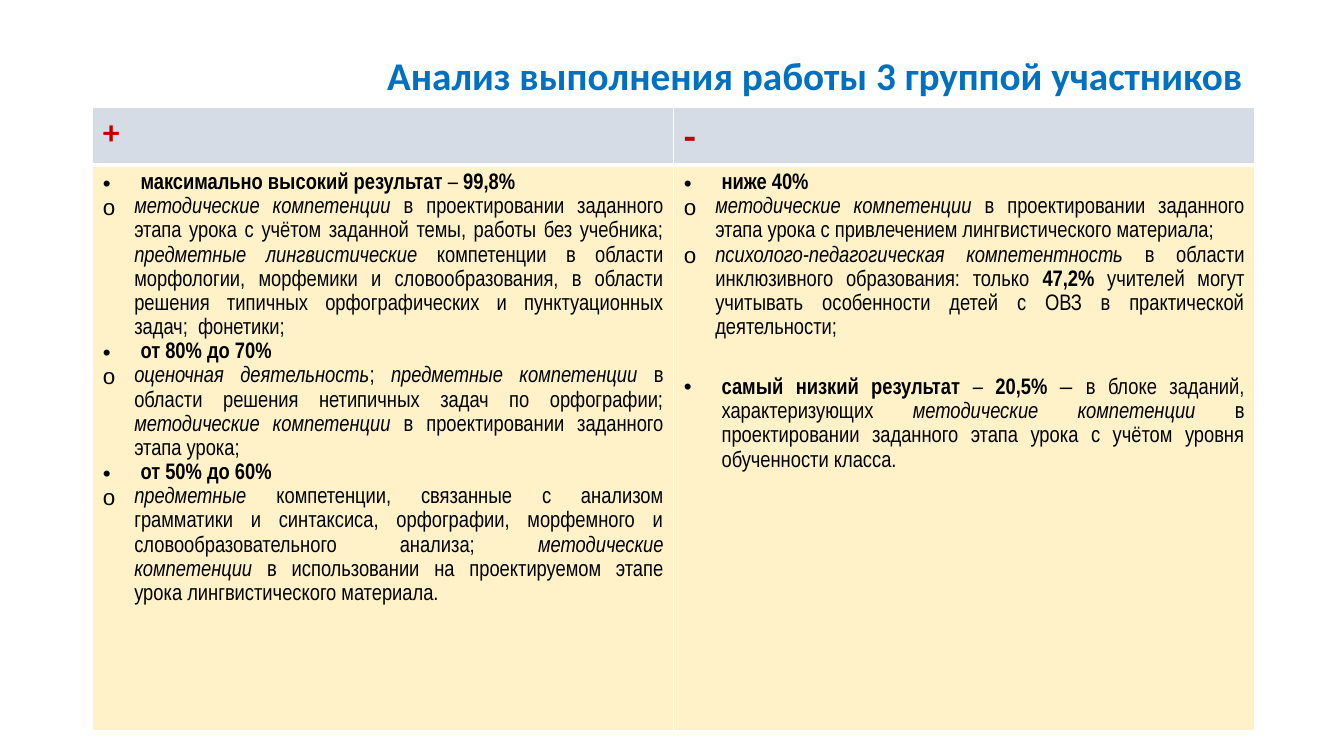
from dataclasses import dataclass

from lxml.etree import SubElement
from pptx import Presentation
from pptx.dml.color import RGBColor
from pptx.enum.text import MSO_ANCHOR, PP_ALIGN
from pptx.oxml.ns import qn
from pptx.util import Pt

BLUE, RED, BLACK, WHITE = "0070C0", "C00000", "000000", "FFFFFF"
HEADER_FILL, BODY_FILL = "D6DCE5", "FFF2C9"
HEADING_FONT, BODY_FONT, SYMBOL_FONT = "Calibri", "Arial Narrow", "Arial"


@dataclass(frozen=True)
class Span:
    text: str
    bold: bool = False
    italic: bool = False
    font: str = BODY_FONT
    size: float = 16
    color: str = BLACK


@dataclass(frozen=True)
class Item:
    spans: tuple[Span, ...]
    bullet: str
    indent: float
    before: float = 0


@dataclass(frozen=True)
class Column:
    heading: Span
    items: tuple[Item, ...]


def rgb(color: str) -> RGBColor:
    return RGBColor.from_string(color)


def strong(text: str) -> Span:
    return Span(text, bold=True)


def slanted(text: str) -> Span:
    return Span(text, italic=True)


def level(*spans: Span, before: float = 0) -> Item:
    return Item(spans, "•", 27, before)


def detail(*spans: Span) -> Item:
    return Item(spans, "o", 22.5)


def heading(text: str, size: float, color: str = RED) -> Span:
    return Span(text, bold=True, font=HEADING_FONT, size=size, color=color)


TITLE = heading("Анализ выполнения работы 3 группой участников", 28, BLUE)

COLUMNS = (
    Column(heading("+", 24), (
        level(strong("максимально высокий результат"), Span(" – "), strong("99,8%")),
        detail(
            slanted("методические компетенции"),
            Span(" в проектировании заданного этапа урока с учётом заданной темы, "
                 "работы без учебника; "),
            slanted("предметные лингвистические"),
            Span(" компетенции в области морфологии, морфемики и словообразования, "
                 "в области решения типичных орфографических и пунктуационных задач;  фонетики;"),
        ),
        level(strong("от 80% до 70%")),
        detail(
            slanted("оценочная деятельность"),
            Span("; "),
            slanted("предметные компетенции"),
            Span(" в области решения нетипичных задач по орфографии; "),
            slanted("методические компетенции"),
            Span(" в проектировании заданного этапа урока;"),
        ),
        level(strong("от 50% до 60%")),
        detail(
            slanted("предметные "),
            Span("компетенции, связанные с анализом грамматики и синтаксиса, орфографии, "
                 "морфемного и словообразовательного анализа; "),
            slanted("методические компетенции "),
            Span("в использовании на проектируемом этапе урока лингвистического материала."),
        ),
    )),
    Column(heading("-", 28), (
        level(strong("ниже 40%")),
        detail(
            slanted("методические компетенции"),
            Span(" в проектировании заданного этапа урока с привлечением "
                 "лингвистического материала;"),
        ),
        detail(
            slanted("психолого-педагогическая компетентность"),
            Span(" в области инклюзивного образования: только "),
            strong("47,2%"),
            Span(" учителей могут учитывать особенности детей с ОВЗ "
                 "в практической деятельности;"),
        ),
        level(
            strong("самый низкий результат"),
            Span(" – "),
            strong("20,5% "),
            Span("‒ ", font=SYMBOL_FONT),
            Span("в блоке заданий, характеризующих "),
            slanted("методические компетенции"),
            Span(" в проектировании заданного этапа урока с учётом уровня обученности класса."),
            before=22.4,
        ),
    )),
)


def write_span(para, span: Span) -> None:
    run = para.add_run()
    run.text = span.text
    run.font.name = span.font
    run.font.size = Pt(span.size)
    run.font.bold = span.bold
    run.font.italic = span.italic
    run.font.color.rgb = rgb(span.color)


def write_item(para, item: Item) -> None:
    para.alignment = PP_ALIGN.JUSTIFY
    para.line_spacing = 1.15
    para.space_before = Pt(item.before)
    properties = para._p.get_or_add_pPr()
    properties.set("marL", str(Pt(item.indent)))
    properties.set("indent", str(-Pt(item.indent)))
    SubElement(properties, qn("a:buFont"), typeface=SYMBOL_FONT)
    SubElement(properties, qn("a:buChar"), char=item.bullet)
    for span in item.spans:
        write_span(para, span)


def style_cell(cell, fill: str, bottom: float) -> None:
    properties = cell._tc.get_or_add_tcPr()
    for side, width in (("L", 1), ("R", 1), ("T", 1), ("B", bottom)):
        line = SubElement(properties, qn(f"a:ln{side}"), w=str(Pt(width)))
        solid = SubElement(line, qn("a:solidFill"))
        SubElement(solid, qn("a:srgbClr"), val=WHITE)
    cell.fill.solid()
    cell.fill.fore_color.rgb = rgb(fill)


def add_title(page) -> None:
    box = page.shapes.add_textbox(Pt(66.24), Pt(28.8), Pt(828), Pt(104.4))
    frame = box.text_frame
    frame.word_wrap = True
    frame.vertical_anchor = MSO_ANCHOR.TOP
    frame.margin_top = Pt(11.6)
    para = frame.paragraphs[0]
    para.alignment = PP_ALIGN.RIGHT
    para.line_spacing = 0.9
    write_span(para, TITLE)


def add_results(page) -> None:
    frame = page.shapes.add_table(2, len(COLUMNS), Pt(66.24), Pt(77.04), Pt(830), Pt(432.72))
    table = frame.table
    table.first_row = False
    table.horz_banding = False
    table.rows[0].height = Pt(33.84)
    table.rows[1].height = Pt(398.88)
    for index, column in enumerate(COLUMNS):
        table.columns[index].width = Pt(415)
        header, body = table.cell(0, index), table.cell(1, index)
        style_cell(header, HEADER_FILL, 3)
        style_cell(body, BODY_FILL, 1)
        write_span(header.text_frame.paragraphs[0], column.heading)
        for number, item in enumerate(column.items):
            text = body.text_frame
            write_item(text.add_paragraph() if number else text.paragraphs[0], item)


def main() -> None:
    deck = Presentation()
    deck.slide_width, deck.slide_height = Pt(960), Pt(540)
    page = deck.slides.add_slide(deck.slide_layouts[6])
    add_title(page)
    add_results(page)
    deck.save("out.pptx")


if __name__ == "__main__":
    main()
